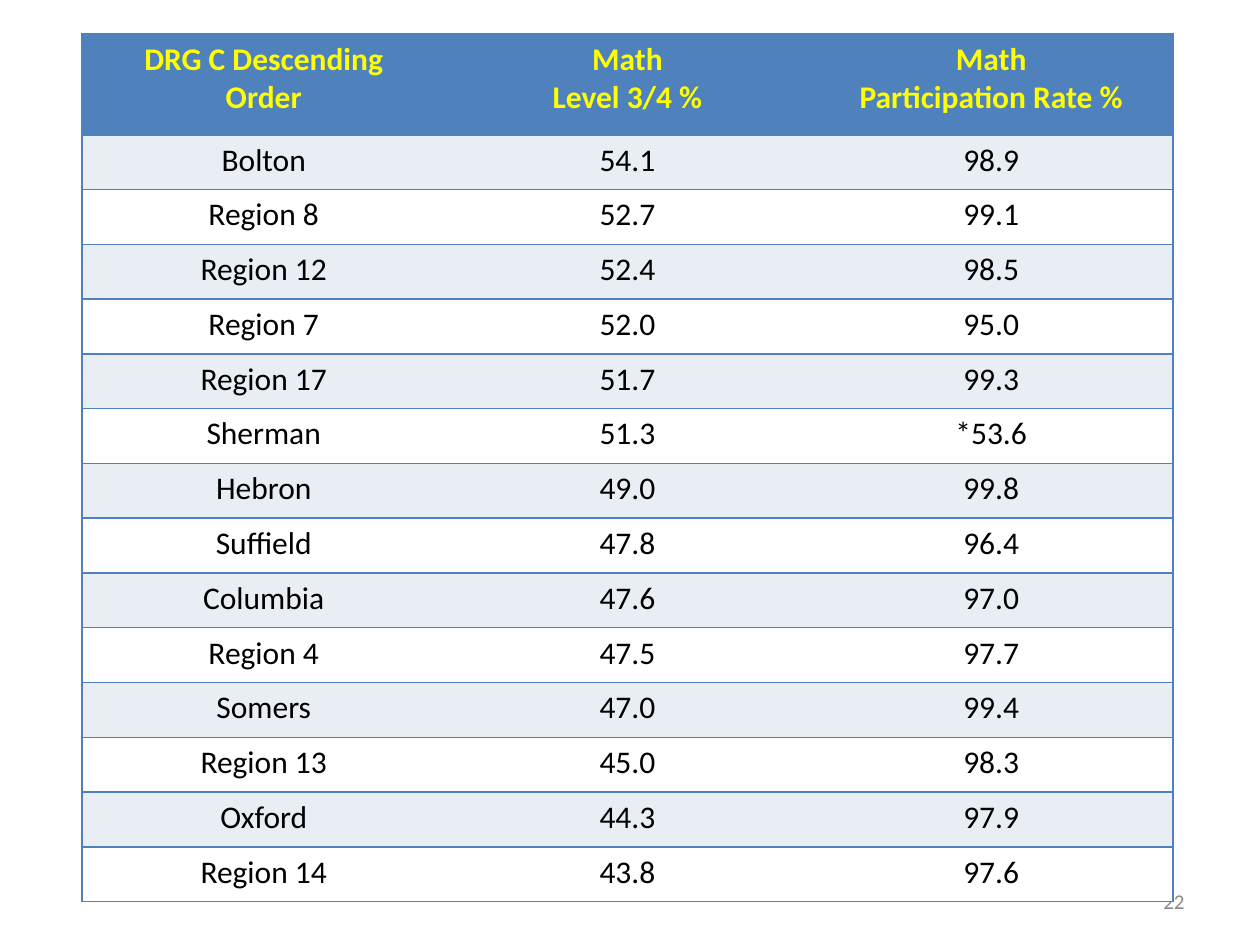
"""Build a slide with a table of math results for DRG C districts."""
from lxml import etree
from pptx import Presentation
from pptx.dml.color import RGBColor
from pptx.enum.text import MSO_ANCHOR, PP_ALIGN
from pptx.oxml.ns import qn
from pptx.util import Inches, Pt

CENTER, RIGHT = PP_ALIGN.CENTER, PP_ALIGN.RIGHT
MIDDLE = MSO_ANCHOR.MIDDLE

BLUE = RGBColor(0x4F, 0x81, 0xBD)
PALE = RGBColor(0xE9, 0xED, 0xF4)
WHITE = RGBColor(0xFF, 0xFF, 0xFF)
YELLOW = RGBColor(0xFF, 0xFF, 0x00)
BLACK = RGBColor(0x00, 0x00, 0x00)
GRAY = RGBColor(0x89, 0x89, 0x89)
FONT = "Calibri"

PAGE_NUMBER = "22"
HEADER = ("DRG C Descending\nOrder", "Math\nLevel 3/4 %", "Math\nParticipation Rate %")
DISTRICTS = [
    ("Bolton", "54.1", "98.9"),
    ("Region 8", "52.7", "99.1"),
    ("Region 12", "52.4", "98.5"),
    ("Region 7", "52.0", "95.0"),
    ("Region 17", "51.7", "99.3"),
    ("Sherman", "51.3", "*53.6"),
    ("Hebron", "49.0", "99.8"),
    ("Suffield", "47.8", "96.4"),
    ("Columbia", "47.6", "97.0"),
    ("Region 4", "47.5", "97.7"),
    ("Somers", "47.0", "99.4"),
    ("Region 13", "45.0", "98.3"),
    ("Oxford", "44.3", "97.9"),
    ("Region 14", "43.8", "97.6"),
]

LEFT, TOP, WIDTH, HEIGHT = Inches(0.65), Inches(0.27), Inches(8.66), Inches(6.89)
HEADER_HEIGHT = Inches(0.8)


def style_text(frame, size, color, alignment, bold=False):
    for paragraph in frame.paragraphs:
        paragraph.alignment = alignment
        font = paragraph.font
        font.name, font.size, font.bold = FONT, Pt(size), bold
        font.color.rgb = color


def set_borders(cell, visible_sides):
    properties = cell._tc.get_or_add_tcPr()
    for side in "LRTB":
        line = etree.SubElement(properties, qn(f"a:ln{side}"), w=str(Pt(1)))
        if side in visible_sides:
            fill = etree.SubElement(line, qn("a:solidFill"))
            etree.SubElement(fill, qn("a:srgbClr"), val=str(BLUE))
        else:
            etree.SubElement(line, qn("a:noFill"))


def add_page_number(slide):
    box = slide.shapes.add_textbox(Inches(7.17), Inches(6.95), Inches(2.33), Inches(0.4))
    frame = box.text_frame
    frame.word_wrap = True
    frame.vertical_anchor = MIDDLE
    frame.text = PAGE_NUMBER
    style_text(frame, 12, GRAY, RIGHT)


def add_results_table(slide):
    rows = [HEADER, *DISTRICTS]
    shape = slide.shapes.add_table(len(rows), len(HEADER), LEFT, TOP, WIDTH, HEIGHT)
    table = shape.table
    body_height = (HEIGHT - HEADER_HEIGHT) // len(DISTRICTS)
    edges = {0: "LTB", len(HEADER) - 1: "RTB"}
    for row_index, values in enumerate(rows):
        is_header = row_index == 0
        table.rows[row_index].height = HEADER_HEIGHT if is_header else body_height
        background = BLUE if is_header else (WHITE, PALE)[row_index % 2]
        for column_index, value in enumerate(values):
            cell = table.cell(row_index, column_index)
            set_borders(cell, edges.get(column_index, "TB"))
            cell.fill.solid()
            cell.fill.fore_color.rgb = background
            cell.text = value
            style_text(cell.text_frame, 18, YELLOW if is_header else BLACK, CENTER, is_header)


def main():
    presentation = Presentation()
    presentation.slide_width, presentation.slide_height = Inches(10), Inches(7.5)
    slide = presentation.slides.add_slide(presentation.slide_layouts[6])
    add_page_number(slide)
    add_results_table(slide)
    presentation.save("out.pptx")


if __name__ == "__main__":
    main()
